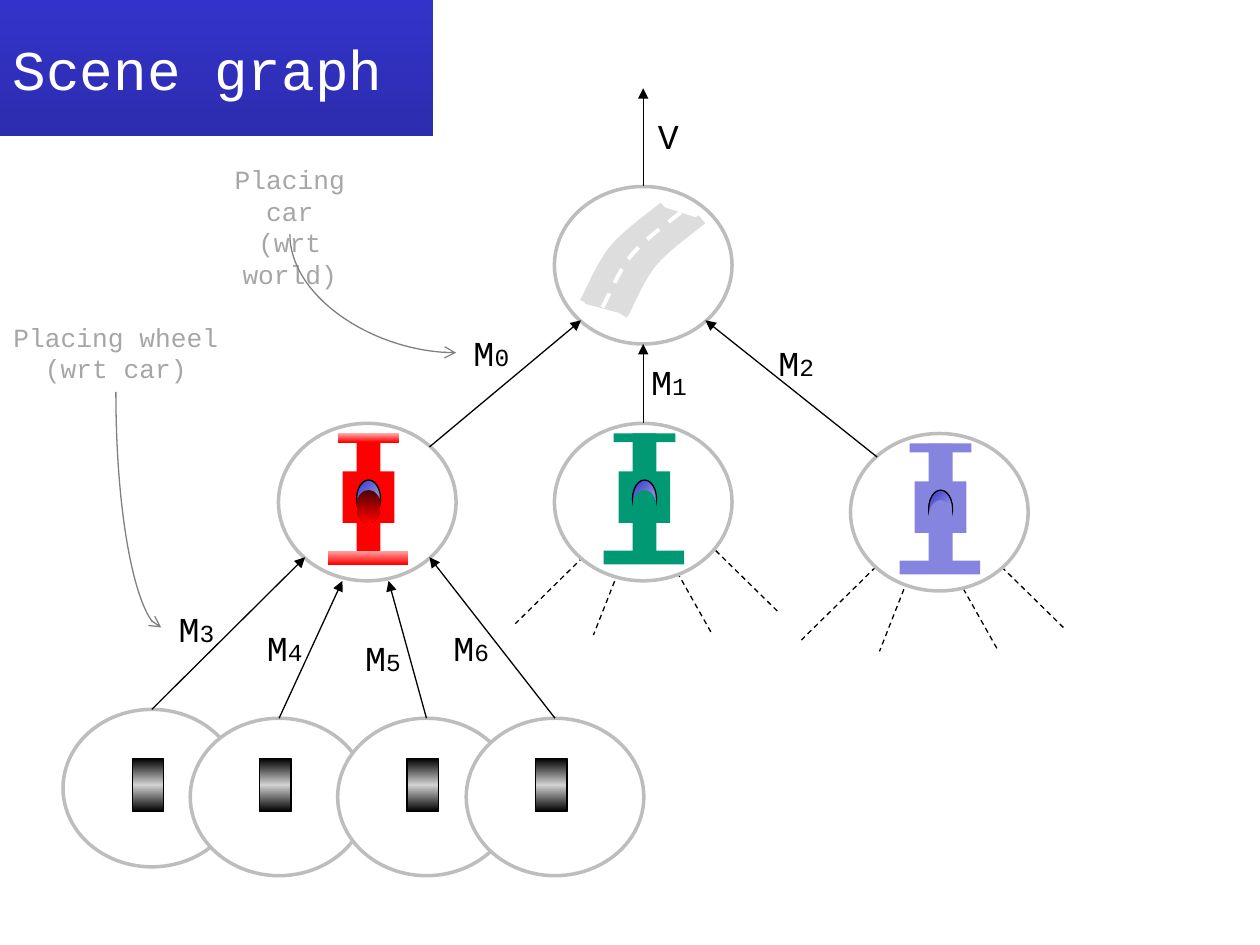
from collections import namedtuple
from dataclasses import dataclass

from lxml import etree
from copy import deepcopy
from pptx import Presentation
from pptx import util as u
from pptx.dml.color import RGBColor
from pptx.enum import dml, shapes, text
from pptx.oxml.ns import qn


@dataclass(frozen=True)
class Theme:
    font: str = "Courier New"
    title_size: int = 32
    label_size: int = 20
    index_size: int = 14
    note_size: int = 15
    ink: str = "000000"
    white: str = "FFFFFF"
    note: str = "A6A6A6"
    pointer: str = "808080"
    ring: str = "BDBDBD"
    road: str = "DDDDDD"
    title_fill: tuple = ("3333CC", "2C2CAE")
    helmet: tuple = ("3333CC", "CACAEB")
    tyre: tuple = ("000000", "D1D1D1", "000000")
    red: str = "FF0000"
    red_wing: tuple = ("FFA9A9", "FF0000")
    red_seat: tuple = ("4D0000", "FF0000")
    green: str = "009973"
    violet: str = "8585E0"


T = Theme()
CELL = 0.01  # grid cell inside a node, in inches
COLS, ROWS = 141, 125  # cells across and down a node
AXLE_TOP = 6.02

Box = namedtuple("Box", "left top width height")


def node_box(left, top):
    return Box(left, top, COLS * CELL, ROWS * CELL)


def cells(box, col, row, cols, rows):
    return Box(box.left + col * CELL, box.top + row * CELL, cols * CELL, rows * CELL)


def point(box, col, row):
    return box.left + col * CELL, box.top + row * CELL


def share(box, across, down):
    return box.left + across * box.width, box.top + down * box.height


def inches(values):
    return [u.Inches(v) for v in values]


def paint(fill, colours, angle=90):
    """Fill with one colour, or with a gradient when given several."""
    if isinstance(colours, str):
        fill.solid()
        fill.fore_color.rgb = RGBColor.from_string(colours)
        return
    fill.gradient()
    fill.gradient_angle = 360 - angle
    first = fill.gradient_stops[0]._gs
    for _ in colours[2:]:
        first.addnext(deepcopy(first))
    for i, (stop, colour) in enumerate(zip(fill.gradient_stops, colours)):
        stop.position = i / (len(colours) - 1)
        stop.color.rgb = RGBColor.from_string(colour)


def stroke(line, colour, width=0.75, dashed=False):
    line.color.rgb = RGBColor.from_string(colour)
    line.width = u.Pt(width)
    if dashed:
        line.dash_style = dml.MSO_LINE.DASH


def preset(slide, kind, box, fill, outline=None, width=0.75, angle=90):
    shape = slide.shapes.add_shape(kind, *inches(box))
    shape.shadow.inherit = False
    paint(shape.fill, fill, angle)
    if outline:
        stroke(shape.line, outline, width)
    else:
        shape.line.fill.background()


def connect(slide, start, end, colour=T.ink, dashed=False, head=None, tail=None,
            kind=shapes.MSO_CONNECTOR.STRAIGHT):
    line = slide.shapes.add_connector(kind, *inches(start + end))
    stroke(line.line, colour, dashed=dashed)
    props = line._element.spPr
    for tag, style in (("a:headEnd", head), ("a:tailEnd", tail)):
        if style:
            etree.SubElement(props.find(qn("a:ln")), qn(tag), type=style)
    etree.SubElement(props, qn("a:effectLst"))
    return line


def sweep(slide, start, end):
    """Quarter-turn arrow that leaves downwards and arrives rightwards."""
    arrow = connect(slide, start, end, T.pointer, tail="arrow",
                    kind=shapes.MSO_CONNECTOR.CURVE)
    across, down = end[0] - start[0], end[1] - start[1]
    frame = ((start[0] + end[0] - down) / 2, (start[1] + end[1] - across) / 2, down, across)
    arrow.left, arrow.top, arrow.width, arrow.height = inches(frame)
    props = arrow._element.spPr
    props.find(qn("a:prstGeom")).set("prst", "curvedConnector2")
    props.xfrm.set("rot", "16200000")
    props.xfrm.set("flipH", "1")


def add_run(paragraph, words, size, colour):
    run = paragraph.add_run()
    run.text = words
    run.font.name, run.font.size = T.font, u.Pt(size)
    run.font.color.rgb = RGBColor.from_string(colour)


def centred_text(slide, box, paragraphs, wrap):
    """Each paragraph is a list of (words, size, colour); None breaks the line."""
    frame = slide.shapes.add_textbox(*inches(box)).text_frame
    frame.word_wrap = wrap
    for i, runs in enumerate(paragraphs):
        paragraph = frame.add_paragraph() if i else frame.paragraphs[0]
        paragraph.alignment = text.PP_ALIGN.CENTER
        for run in runs:
            if run:
                add_run(paragraph, *run)
            else:
                paragraph.add_line_break()


def edge_label(slide, left, top, letter, index=""):
    runs = [(letter, T.label_size, T.ink)]
    if index:
        runs.append((index, T.index_size, T.ink))
    centred_text(slide, Box(left, top, 0.56 if index else 0.39, 0.44), [runs], False)


def title(slide, box):
    heading = slide.shapes.title
    heading.left, heading.top, heading.width, heading.height = inches(box)
    paint(heading.fill, T.title_fill)
    frame = heading.text_frame
    frame.auto_size = text.MSO_AUTO_SIZE.NONE
    frame.vertical_anchor = text.MSO_ANCHOR.MIDDLE
    frame.paragraphs[0].alignment = text.PP_ALIGN.LEFT
    add_run(frame.paragraphs[0], "Scene graph", T.title_size, T.white)


def ring(slide, box):
    preset(slide, shapes.MSO_SHAPE.OVAL, box, T.white, T.ring, 2)


def outline(slide, points, closed):
    (first, *rest) = [tuple(inches(p)) for p in points]
    builder = slide.shapes.build_freeform(*first)
    builder.add_line_segments(rest, close=closed)
    shape = builder.convert_to_shape()
    shape.shadow.inherit = False
    return shape


def bezier(p0, p1, p2, p3, steps=12):
    for i in range(1, steps + 1):
        t = i / steps
        weights = ((1 - t) ** 3, 3 * t * (1 - t) ** 2, 3 * t * t * (1 - t), t ** 3)
        yield tuple(sum(w * p[axis] for w, p in zip(weights, (p0, p1, p2, p3)))
                    for axis in (0, 1))


def road_node(slide, box):
    ring(slide, box)
    surface = [(54, 101), (71, 68), (82, 55), (98, 40), (117, 26), (86, 16),
               (62, 37), (45, 52), (35, 68), (27, 85), (24, 93)]
    tarmac = outline(slide, [point(box, *p) for p in surface], True)
    paint(tarmac.fill, T.road)
    tarmac.line.fill.background()
    bend = [(38, 96), (42, 90), (50, 69), (60, 56), (71, 42), (93, 27), (101, 20)]
    lane = [bend[0], *bezier(*bend[:4]), *bezier(*bend[3:])]
    for (dx, dy), colour, width, dashed in (((0, 0), T.white, 2.25, True),
                                            ((-14, -4), T.road, 6, False),
                                            ((16, 6), T.road, 6, False)):
        stripe = outline(slide, [point(box, x + dx, y + dy) for x, y in lane], False)
        stripe.fill.background()
        stroke(stripe.line, colour, width, dashed)


def car_node(slide, box, body, wing=None, seat=None):
    ring(slide, box)
    rect, oval = shapes.MSO_SHAPE.RECTANGLE, shapes.MSO_SHAPE.OVAL
    wing, seat = wing or body, seat or body
    for kind, place, fill, line, angle in (
            (rect, (51, 38, 41, 41), body, None, 90),
            (rect, (62, 8, 19, 101), body, None, 90),
            (rect, (47, 8, 49, 7), wing, None, 90),
            (oval, (62, 45, 19, 30), T.helmet, T.ink, 45),
            (oval, (62, 53, 19, 26), seat, None, 90),
            (rect, (39, 101, 64, 11), wing, None, 90)):
        preset(slide, kind, cells(box, *place), fill, line, angle=angle)


def hidden_wheels(slide, box, shift=(0, 0)):
    """Dashed stubs towards the wheels that are not drawn."""
    for x1, y1, x2, y2 in ((20, 106, -39, 164), (45, 117, 23, 173),
                           (86, 117, 117, 172), (120, 106, 171, 156)):
        dx, dy = shift
        connect(slide, point(box, x1 + dx, y1 + dy), point(box, x2 + dx, y2 + dy), dashed=True)


def wheel_node(slide, box):
    ring(slide, box)
    tyre = Box(box.left + 55 * CELL, AXLE_TOP, 25 * CELL, 42 * CELL)
    preset(slide, shapes.MSO_SHAPE.RECTANGLE, tyre, T.tyre, T.ink)


def scene_graph(slide):
    road = node_box(4.4, 1.48)
    red, green, violet = node_box(2.21, 3.36), node_box(4.4, 3.36), node_box(6.75, 3.44)
    wheels = [node_box(*place) for place in ((0.5, 5.63), (1.51, 5.7), (2.68, 5.7), (3.7, 5.7))]
    low, high = 0.15, 0.85  # diagonal points of an ellipse
    top = (0.5, 0)
    hidden_wheels(slide, violet)
    hidden_wheels(slide, green, (8, -5))
    road_node(slide, road)
    car_node(slide, red, T.red, T.red_wing, T.red_seat)
    car_node(slide, green, T.green)
    car_node(slide, violet, T.violet)
    for wheel in wheels:
        wheel_node(slide, wheel)
    edges = [(road, (low, high), red, (high, low)),
             (road, (0.5, 1), green, top),
             (road, (high, high), violet, (low, low))]
    sockets = [(low, high), (0.36, 1), (0.62, 1), (high, high)]
    edges += [(red, socket, wheel, top) for socket, wheel in zip(sockets, wheels)]
    for parent, upper, child, lower in edges:
        connect(slide, share(parent, *upper), share(child, *lower), head="triangle")
    crown = share(road, *top)
    connect(slide, (crown[0], 0.7), crown, head="triangle")
    edge_label(slide, 5.11, 0.86, "V")
    places = [(3.62, 2.58), (5.03, 2.81), (6.04, 2.66), (1.28, 4.77),
              (1.98, 4.92), (2.76, 5), (3.46, 4.92)]
    for index, place in enumerate(places):
        edge_label(slide, *place, "M", str(index))


def placing_note(slide, box, paragraphs, target):
    styled = [[line and (line, T.note_size, T.note) for line in lines] for lines in paragraphs]
    centred_text(slide, box, styled, True)
    sweep(slide, share(box, 0.5, 1), target)


def main():
    deck = Presentation()
    deck.slide_width, deck.slide_height = u.Inches(10), u.Inches(7.5)
    slide = deck.slides.add_slide(deck.slide_layouts[5])
    title(slide, Box(0, 0, 3.44, 1.08))
    scene_graph(slide)
    placing_note(slide, Box(1.68, 1.25, 1.24, 0.61),
                 [["Placing car", None, "(wrt world)"]], (3.62, 2.8))
    placing_note(slide, Box(0, 2.5, 1.84, 0.61),
                 [["Placing wheel"], ["(wrt car)"]], (1.28, 4.98))
    deck.save("out.pptx")


if __name__ == "__main__":
    main()
